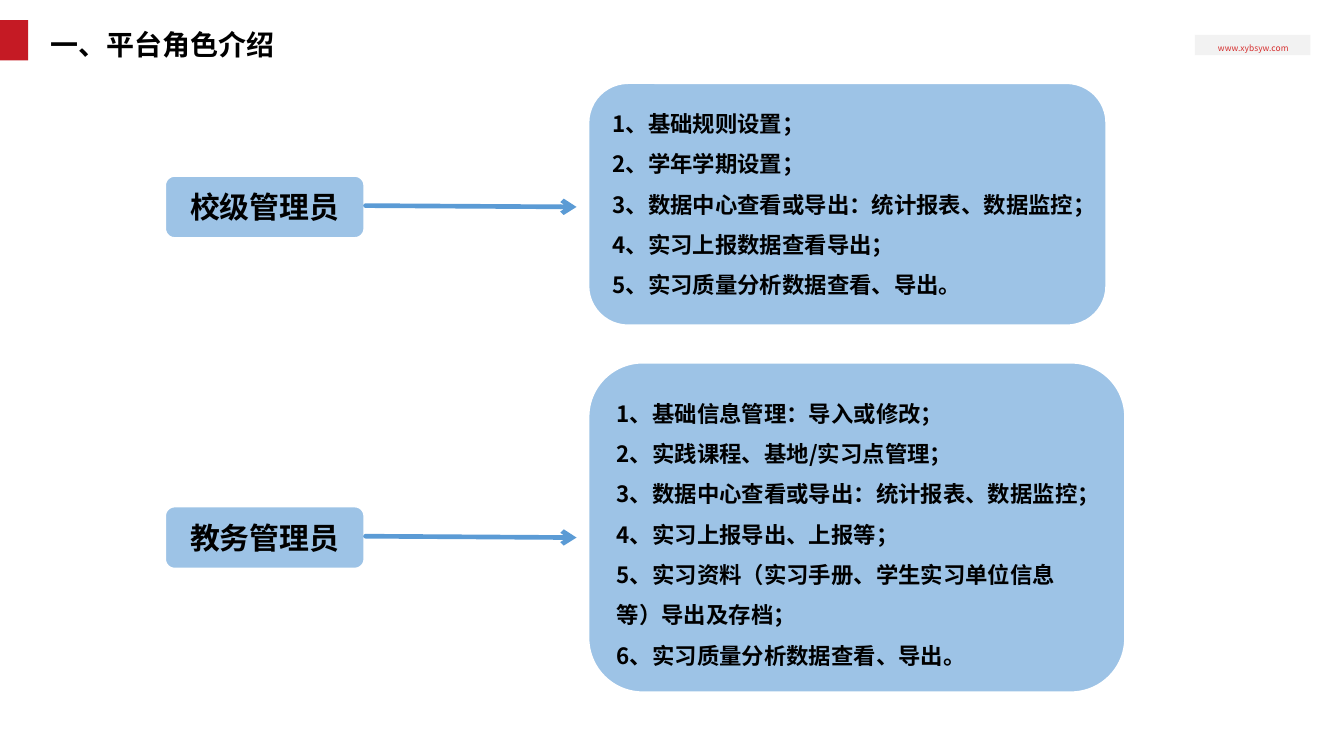
from pptx import Presentation
from pptx.dml.color import RGBColor
from pptx.enum.shapes import MSO_CONNECTOR as Connector, MSO_SHAPE as Shape
from pptx.enum.text import MSO_ANCHOR as Anchor, PP_ALIGN as Align
from pptx.oxml.ns import qn
from pptx.util import Inches, Pt
from lxml.etree import SubElement

# Content
TITLE = "一、平台角色介绍"
WEBSITE = "www.xybsyw.com"
ROLES = [
    {
        "name": "校级管理员",
        "label_top": 1.3,
        "duty_box": (4.37, 0.61, 3.87, 1.82),
        "first_spacing": 1.0,
        "duties": [
            "1、基础规则设置；",
            "2、学年学期设置；",
            "3、数据中心查看或导出：统计报表、数据监控；",
            "4、实习上报数据查看导出；",
            "5、实习质量分析数据查看、导出。",
        ],
    },
    {
        "name": "教务管理员",
        "label_top": 3.76,
        "duty_box": (4.37, 2.69, 4.01, 2.47),
        "first_spacing": 1.5,
        "duties": [
            "1、基础信息管理：导入或修改；",
            "2、实践课程、基地/实习点管理；",
            "3、数据中心查看或导出：统计报表、数据监控；",
            "4、实习上报导出、上报等；",
            "5、实习资料（实习手册、学生实习单位信息等）导出及存档；",
            "6、实习质量分析数据查看、导出。",
        ],
    },
]

# Formats
SLIDE_WIDTH = 10
FONT = "Noto Sans CJK SC"
BLUE, ARROW_BLUE, RED, GRAY = "9DC3E6", "5B9BD5", "C51A24", "F2F2F2"
TITLE_FONT = {"size": Pt(15), "bold": True}
LABEL_FONT = {"size": Pt(16), "bold": True}
DUTY_FONT = {"size": Pt(12), "bold": True}
WEBSITE_FONT = {"size": Pt(4.5), "bold": False}
LABEL_LEFT, LABEL_WIDTH, LABEL_HEIGHT = 1.22, 1.5, 0.48
ARROW_END = 4.29


def color(value):
    return RGBColor.from_string(value)


def add_box(slide, kind, box, fill, outlined=False):
    shape = slide.shapes.add_shape(kind, *map(Inches, box))
    shape.shadow.inherit = False
    shape.fill.solid()
    shape.fill.fore_color.rgb = color(fill)
    if outlined:
        shape.line.color.rgb = color("FFFFFF")
        shape.line.width = Pt(2.25)
    else:
        shape.line.fill.background()
    return shape


def write(shape, lines, font, align=Align.LEFT, anchor=Anchor.MIDDLE,
          spacing=1.0, first_spacing=None, text_color="000000"):
    frame = shape.text_frame
    frame.word_wrap = True
    frame.vertical_anchor = anchor
    for index, line in enumerate(lines):
        paragraph = frame.add_paragraph() if index else frame.paragraphs[0]
        paragraph.alignment = align
        paragraph.line_spacing = spacing if index else first_spacing or spacing
        run = paragraph.add_run()
        run.text = line
        for name, value in {"name": FONT, **font}.items():
            setattr(run.font, name, value)
        run.font.color.rgb = color(text_color)
        SubElement(run._r.get_or_add_rPr(), qn("a:ea"), typeface=FONT)


def add_arrow(slide, start, end):
    arrow = slide.shapes.add_connector(
        Connector.STRAIGHT, *map(Inches, start + end))
    arrow.line.color.rgb = color(ARROW_BLUE)
    arrow.line.width = Pt(2.5)
    line = arrow.line._get_or_add_ln()
    line.set("cap", "rnd")
    SubElement(line, qn("a:tailEnd"), type="arrow")
    SubElement(arrow._element.spPr, qn("a:effectLst"))


# Widescreen slide, 16:9
presentation = Presentation()
presentation.slide_width = Inches(SLIDE_WIDTH)
presentation.slide_height = Inches(SLIDE_WIDTH * 9 / 16)
slide = presentation.slides.add_slide(presentation.slide_layouts[6])

# Header: red mark, web address, title
add_box(slide, Shape.RECTANGLE, (0, 0.15, 0.21, 0.3), RED)
add_box(slide, Shape.RECTANGLE, (8.89, 0.26, 0.86, 0.15), GRAY)
website = slide.shapes.add_textbox(*map(Inches, (9, 0.27, 0.65, 0.18)))
for side in ("left", "right", "top", "bottom"):
    setattr(website.text_frame, f"margin_{side}", Inches(0.05))
write(website, [WEBSITE], WEBSITE_FONT, Align.CENTER, Anchor.TOP,
      text_color="D62F2F")
title = slide.shapes.add_textbox(*map(Inches, (0.28, 0.08, 5.97, 0.43)))
write(title, [TITLE], TITLE_FONT, anchor=Anchor.BOTTOM, spacing=0.9)

# Roles: label, arrow, duties
for role in ROLES:
    top = role["label_top"]
    label = add_box(slide, Shape.ROUNDED_RECTANGLE,
                    (LABEL_LEFT, top, LABEL_WIDTH, LABEL_HEIGHT), BLUE, True)
    write(label, [role["name"]], LABEL_FONT, Align.CENTER)
    middle = top + LABEL_HEIGHT / 2
    add_arrow(slide, (LABEL_LEFT + LABEL_WIDTH, middle - 0.01),
              (ARROW_END, middle))
    duties = add_box(slide, Shape.ROUNDED_RECTANGLE, role["duty_box"], BLUE, True)
    write(duties, role["duties"], DUTY_FONT, spacing=1.5,
          first_spacing=role["first_spacing"])

presentation.save("out.pptx")
